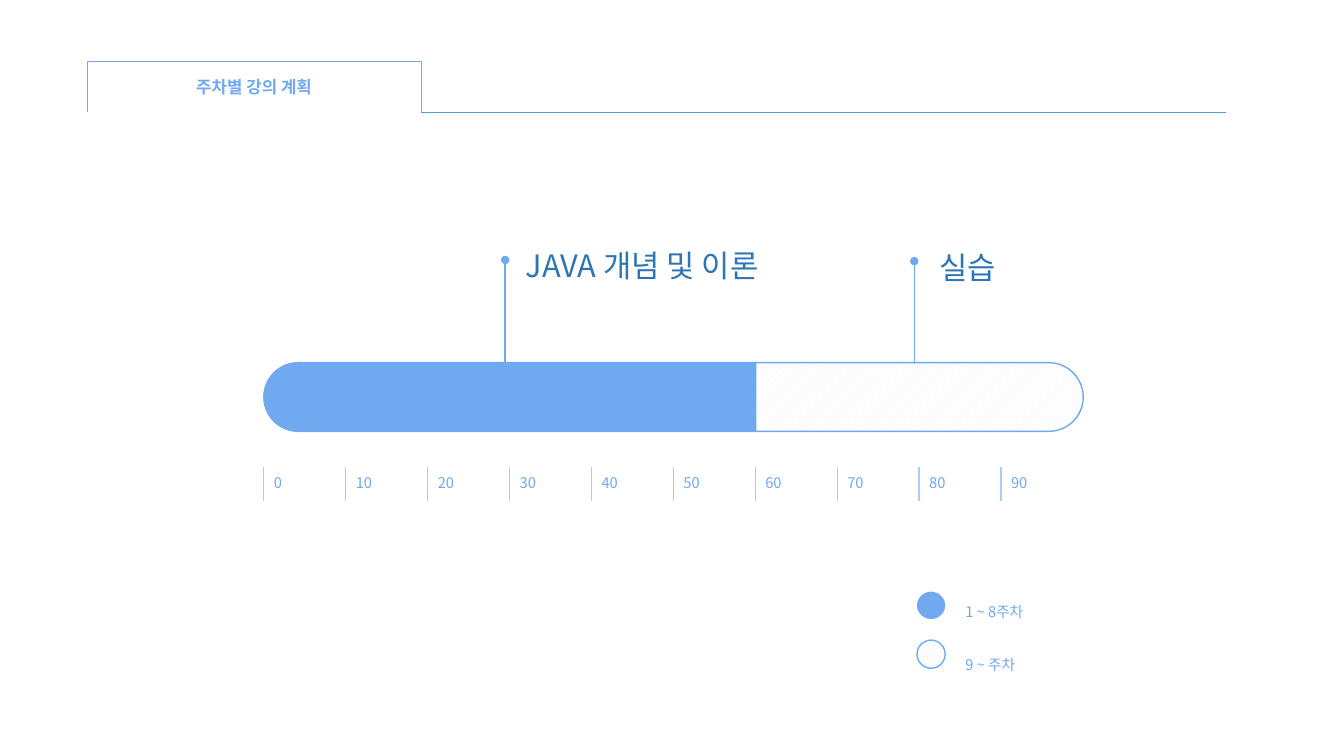
from lxml import etree
from pptx import Presentation
from pptx import util as u
from pptx.dml.color import RGBColor
from pptx.enum import dml, shapes, text
from pptx.oxml import ns

BLUE = RGBColor(0x70, 0xA9, 0xF0)
RULE_BLUE = RGBColor(0x5B, 0x9B, 0xD5)
LABEL_BLUE = RGBColor(0x2E, 0x75, 0xB6)
TICK_BLUE = RGBColor(0xA8, 0xCE, 0xF5)
HATCH = RGBColor(0xE8, 0xED, 0xF5)
WHITE = RGBColor(0xFF, 0xFF, 0xFF)
FONT = "Noto Sans CJK KR"

prs = Presentation()
prs.slide_width, prs.slide_height = u.Cm(33.87), u.Cm(19.05)
slide = prs.slides.add_slide(prs.slide_layouts[6])


def style_runs(frame, size, color, bold=False):
    for paragraph in frame.paragraphs:
        for run in paragraph.runs:
            font = run.font
            font.name, font.size, font.bold = FONT, u.Pt(size), bold
            font.color.rgb = color
            east_asian = etree.SubElement(font._element, ns.qn("a:ea"))
            east_asian.set("typeface", FONT)


def add_line(x1, y1, x2, y2, color, width):
    line = slide.shapes.add_connector(
        shapes.MSO_CONNECTOR.STRAIGHT, u.Cm(x1), u.Cm(y1), u.Cm(x2), u.Cm(y2))
    line.line.color.rgb = color
    line.line.width = u.Pt(width)
    etree.SubElement(line._element.spPr, ns.qn("a:effectLst"))
    return line


# Title tab, progress bar and legend dots: kind, box, rotation, adjustments, fill, line width
KIND = shapes.MSO_SHAPE
for kind, box, rotation, adjustments, fill, width in [
    (KIND.RIGHT_BRACKET, (5.77, -2.03, 1.27, 8.41), 270, [0], None, 0.5),
    (KIND.ROUNDED_RECTANGLE, (6.65, 9.14, 20.65, 1.73), 0, [0.5], "hatch", 1),
    (KIND.ROUND_2_SAME_RECTANGLE, (11.99, 3.79, 1.73, 12.42), 270, [0.5, 0], "solid", 0),
    (KIND.OVAL, (23.11, 16.13, 0.71, 0.71), 0, [], "hatch", 1),
    (KIND.OVAL, (23.11, 14.91, 0.71, 0.69), 0, [], "solid", 0),
]:
    part = slide.shapes.add_shape(kind, *map(u.Cm, box))
    part.shadow.inherit = False
    part.rotation = rotation
    for index, value in enumerate(adjustments):
        part.adjustments[index] = value
    if fill == "hatch":
        part.fill.patterned()
        part.fill.pattern = dml.MSO_PATTERN.WIDE_UPWARD_DIAGONAL
        part.fill.fore_color.rgb = HATCH
        part.fill.back_color.rgb = WHITE
    elif fill == "solid":
        part.fill.solid()
        part.fill.fore_color.rgb = BLUE
    else:
        part.fill.background()
    if width:
        part.line.color.rgb = BLUE
        part.line.width = u.Pt(width)
    else:
        part.line.fill.background()

add_line(10.62, 2.82, 30.89, 2.82, RULE_BLUE, 0.5)
for x, bottom in [(12.73, 9.14), (23.04, 9.17)]:
    callout = add_line(x, bottom, x, bottom - 2.59, BLUE, 1)
    etree.SubElement(callout.line._get_or_add_ln(), ns.qn("a:tailEnd")).set("type", "oval")

# Scale from 0 to 90
scale = slide.shapes.add_table(
    1, 10, u.Cm(6.65), u.Cm(11.76), u.Cm(20.65), u.Cm(0.86)).table
scale.first_row = scale.horz_banding = False
for column, cell in enumerate(scale.rows[0].cells):
    cell.text = str(column * 10)
    style_runs(cell.text_frame, 10.5, BLUE)
    properties = cell._tc.get_or_add_tcPr()
    ticked = ["a:lnL"] if column == 9 else ["a:lnL", "a:lnR"]
    for side in ["a:lnL", "a:lnR", "a:lnT", "a:lnB"]:
        border = etree.SubElement(properties, ns.qn(side))
        if side in ticked:
            border.set("w", str(u.Pt(1)))
            color = etree.SubElement(
                etree.SubElement(border, ns.qn("a:solidFill")), ns.qn("a:srgbClr"))
            color.set("val", str(TICK_BLUE))
        else:
            etree.SubElement(border, ns.qn("a:noFill"))
    cell.fill.background()

# Title, callout labels and legend: words, box, size, color, line spacing
for words, box, size, color, spacing in [
    ("주차별 강의 계획", (4.5, 1.8, 3.81, 0.76), 12, BLUE, 1),
    ("JAVA 개념 및 이론", (13, 6.1, 8.13, 1.19), 22, LABEL_BLUE, 1),
    ("실습", (23.42, 5.69, 4.88, 1.47), 22, LABEL_BLUE, 1.5),
    ("1 ~ 8주차\n9 ~ 주차", (24.08, 14.17, 3.58, 2.69), 10.5, BLUE, 3),
]:
    is_title = size == 12
    frame = slide.shapes.add_textbox(*map(u.Cm, box)).text_frame
    frame.text = words
    frame.word_wrap = not is_title
    frame.auto_size = text.MSO_AUTO_SIZE.SHAPE_TO_FIT_TEXT
    style_runs(frame, size, color, bold=is_title)
    for paragraph in frame.paragraphs:
        paragraph.line_spacing = float(spacing)
        if is_title:
            paragraph.alignment = text.PP_ALIGN.CENTER

prs.save("out.pptx")
